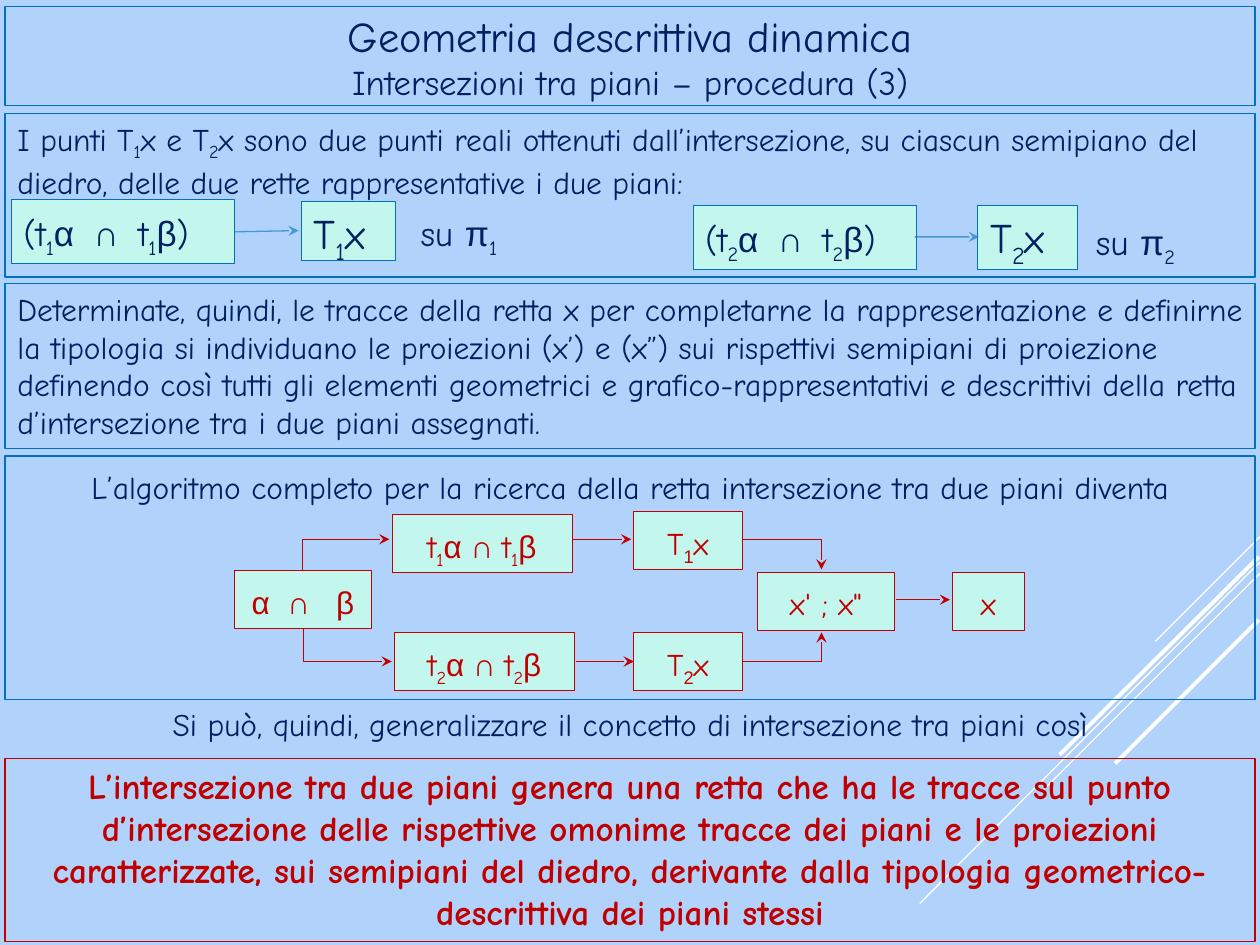
import dataclasses
import itertools
from typing import Optional

import lxml.etree
import pptx
import pptx.dml.color
import pptx.enum.shapes
import pptx.enum.text
import pptx.oxml.ns
import pptx.util

Inches, Pt, qn = pptx.util.Inches, pptx.util.Pt, pptx.oxml.ns.qn
CONNECTOR = pptx.enum.shapes.MSO_CONNECTOR
ALIGN = pptx.enum.text.PP_ALIGN
ANCHOR = pptx.enum.text.MSO_ANCHOR


@dataclasses.dataclass(frozen=True)
class Theme:
    back: str = "B1D3FB"
    mint: str = "C3F7ED"
    blue: str = "0070C0"
    navy: str = "002060"
    red: str = "C00000"
    white: str = "FFFFFF"
    font: str = "Comic Neue"
    symbol_font: str = "Arial"
    title: float = 24.3
    subtitle: float = 19.8
    body: float = 18
    formula: float = 20
    point: float = 24
    thin: float = 0.25
    line: float = 0.75
    thick: float = 2.25


T = Theme()


@dataclasses.dataclass(frozen=True)
class Box:
    """A rectangle; in its text _ marks a subscript, ^ one in the symbol font."""
    x: float
    y: float
    w: float
    h: float
    lines: tuple[str, ...]
    sizes: tuple[float, ...] = (T.body,)
    color: str = T.navy
    fill: Optional[str] = None
    line: Optional[str] = T.blue
    weight: float = T.line
    centred: bool = False
    middle: bool = False
    bold: bool = False
    spacing: Optional[float] = None
    after: float = 0
    inset_top: float = 0.05


@dataclasses.dataclass(frozen=True)
class Arrow:
    x1: float
    y1: float
    x2: float
    y2: float
    color: str = T.red
    weight: float = T.line
    head: bool = True
    alpha: Optional[int] = None


def rgb(color: str) -> pptx.dml.color.RGBColor:
    return pptx.dml.color.RGBColor.from_string(color)


def marked_chars(text: str) -> list[tuple[str, tuple[str, bool]]]:
    """Pair each character with its font and whether it is a subscript."""
    chars, mark, font = [], "", T.font
    for ch in text:
        if ch in "_^":
            mark = ch
            continue
        if mark:
            font = T.symbol_font if mark == "^" else T.font
        elif ch != " ":
            font = T.symbol_font if ch in "αβπ∩" else T.font
        chars.append((ch, (font, bool(mark))))
        mark = ""
    return chars


def draw_box(s, b: Box) -> None:
    sp = s.shapes.add_shape(pptx.enum.shapes.MSO_SHAPE.RECTANGLE,
                            Inches(b.x), Inches(b.y), Inches(b.w), Inches(b.h))
    sp.shadow.inherit = False
    if b.fill:
        sp.fill.solid()
        sp.fill.fore_color.rgb = rgb(b.fill)
    else:
        sp.fill.background()
    if b.line:
        sp.line.color.rgb = rgb(b.line)
        sp.line.width = Pt(b.weight)
    else:
        sp.line.fill.background()
    tf = sp.text_frame
    tf.word_wrap = True
    tf.margin_top = Inches(b.inset_top)
    tf.vertical_anchor = ANCHOR.MIDDLE if b.middle else ANCHOR.TOP
    for i, (line, size) in enumerate(zip(b.lines, b.sizes)):
        p = tf.add_paragraph() if i else tf.paragraphs[0]
        p.alignment = ALIGN.CENTER if b.centred else ALIGN.LEFT
        p.space_after = Pt(b.after)
        if b.spacing:
            p.line_spacing = b.spacing
        for (font, sub), group in itertools.groupby(marked_chars(line), lambda c: c[1]):
            r = p.add_run()
            r.text = "".join(ch for ch, _ in group)
            r.font.name, r.font.size, r.font.bold = font, Pt(size), b.bold
            r.font.color.rgb = rgb(b.color)
            if sub:
                r.font._element.set("baseline", "-25000")


def draw_arrow(s, a: Arrow, kind=CONNECTOR.STRAIGHT):
    c = s.shapes.add_connector(kind, Inches(a.x1), Inches(a.y1), Inches(a.x2), Inches(a.y2))
    c.line.color.rgb = rgb(a.color)
    c.line.width = Pt(a.weight)
    sp_pr = c._element.spPr
    ln = sp_pr.find(qn("a:ln"))
    if a.alpha:
        clr = ln.find(qn("a:solidFill"))[0]
        lxml.etree.SubElement(clr, qn("a:alpha")).set("val", str(a.alpha * 1000))
    if a.head:
        lxml.etree.SubElement(ln, qn("a:tailEnd")).set("type", "stealth")
    lxml.etree.SubElement(sp_pr, qn("a:effectLst"))
    return c


def draw_elbow(s, a: Arrow, vertical_first: bool) -> None:
    """One-bend arrow; a vertical start needs the frame turned a quarter."""
    frame, up = a, a.y2 < a.y1
    if vertical_first:
        cx, cy = (a.x1 + a.x2) / 2, (a.y1 + a.y2) / 2
        half_w = abs(a.y2 - a.y1) / 2
        half_h = (a.x2 - a.x1) / 2 * (1 if up else -1)
        frame = dataclasses.replace(a, x1=cx + half_w, x2=cx - half_w,
                                    y1=cy + half_h, y2=cy - half_h)
    c = draw_arrow(s, frame, CONNECTOR.ELBOW)
    sp_pr = c._element.spPr
    sp_pr.find(qn("a:prstGeom")).set("prst", "bentConnector2")
    if vertical_first:
        sp_pr.find(qn("a:xfrm")).set("rot", str((90 if up else 270) * 60000))


def panel(y: float, h: float, *lines: str, **style) -> Box:
    return Box(0.04, y, 9.92, h, lines, **style)


def formula(x: float, y: float, n: int) -> Box:
    return Box(x, y, 1.77, 0.51, (f"(t_{n}α  ∩  t_{n}β)",), (T.formula,),
               fill=T.mint, weight=T.thin, inset_top=0.1)


def trace_point(x: float, y: float, w: float, h: float, n: int) -> Box:
    return Box(x, y, w, h, (f"T_{n}x",), (T.point,), fill=T.mint)


def plane_label(x: float, y: float, n: int) -> Box:
    return Box(x, y, 1.03, 0.44, (f"su π_{n}",), (T.formula,), line=None)


def step(x: float, y: float, w: float, text: str) -> Box:
    return Box(x, y, w, 0.46, (text,), color=T.red, fill=T.mint, line=T.red,
               weight=T.thin, centred=True, spacing=1.15, after=10)


RAYS = [(10, 4.26, 9.17, 5.09, T.line), (10, 4.46, 7.3, 7.17, T.line),
        (10, 4.55, 8.28, 6.27, T.line), (9.99, 4.42, 8.41, 5.99, T.thick),
        (9.99, 4.92, 8.85, 6.06, T.thick)]

BOXES = [
    # Title and the three explanatory panels
    panel(0.05, 0.79, "Geometria descrittiva dinamica", "Intersezioni tra piani – procedura (3)",
          sizes=(T.title, T.subtitle), centred=True, middle=True),
    panel(0.9, 1.3, "I punti T_1x e T_2x sono due punti reali ottenuti dall’intersezione, su ciascun "
          "semipiano del diedro, delle due rette rappresentative i due piani:"),
    panel(2.25, 1.31, "Determinate, quindi, le tracce della retta x per completarne la "
          "rappresentazione e definirne la tipologia si individuano le proiezioni (x’) e (x”) sui "
          "rispettivi semipiani di proiezione definendo così tutti gli elementi geometrici e "
          "grafico-rappresentativi e descrittivi della retta d’intersezione tra i due piani assegnati."),
    panel(3.62, 1.93, "L’algoritmo completo per la ricerca della retta intersezione tra due piani "
          "diventa", centred=True, spacing=1.15),
    # Trace formulas on the two planes
    formula(0.09, 1.58, 1), trace_point(2.39, 1.6, 0.75, 0.47, 1), plane_label(3.24, 1.63, 1),
    formula(5.5, 1.63, 2), trace_point(7.76, 1.63, 0.79, 0.51, 2), plane_label(8.6, 1.7, 2),
    # Steps of the algorithm
    step(1.86, 4.53, 1.09, "α  ∩   β"),
    step(3.11, 4.08, 1.43, "t_1α ∩ t_1β"), step(3.13, 5.02, 1.43, "t_2α ∩ t_2β"),
    step(5.03, 4.06, 0.86, "T^1x"), step(5.03, 5.02, 0.86, "T^2x"),
    step(6.01, 4.54, 1.09, "x' ; x\""), step(7.56, 4.54, 0.57, "x"),
    # Conclusion
    panel(5.55, 0.4, "Si può, quindi, generalizzare il concetto di intersezione tra piani così",
          line=None, centred=True),
    panel(6.02, 1.45, "L’intersezione tra due piani genera una retta che ha le tracce sul punto "
          "d’intersezione delle rispettive omonime tracce dei piani e le proiezioni caratterizzate, "
          "sui semipiani del diedro, derivante dalla tipologia geometrico-descrittiva dei piani "
          "stessi", sizes=(T.formula,), color=T.red, line=T.red, centred=True, bold=True),
]

ARROWS = [Arrow(1.86, 1.84, 2.37, 1.83, T.blue, alpha=60),
          Arrow(7.26, 1.88, 7.77, 1.88, T.blue, alpha=60),
          Arrow(4.55, 4.28, 5.01, 4.28), Arrow(4.57, 5.25, 5.03, 5.25),
          Arrow(7.11, 4.76, 7.54, 4.76)]
BRANCHES = [Arrow(2.4, 4.53, 3.09, 4.28), Arrow(2.41, 4.99, 3.11, 5.25)]
MERGES = [Arrow(5.89, 4.28, 6.52, 4.52, weight=T.thin),
          Arrow(5.89, 5.25, 6.52, 5.02, weight=T.thin)]


def main() -> None:
    prs = pptx.Presentation()
    prs.slide_width, prs.slide_height = Inches(10), Inches(7.5)
    s = prs.slides.add_slide(prs.slide_layouts[6])
    s.background.fill.solid()
    s.background.fill.fore_color.rgb = rgb(T.back)
    for x1, y1, x2, y2, weight in RAYS:
        draw_arrow(s, Arrow(x1, y1, x2, y2, T.white, weight, head=False))
    for b in BOXES:
        draw_box(s, b)
    for a in ARROWS:
        draw_arrow(s, a)
    for a in BRANCHES:
        draw_elbow(s, a, vertical_first=True)
    for a in MERGES:
        draw_elbow(s, a, vertical_first=False)
    prs.save("out.pptx")


if __name__ == "__main__":
    main()
